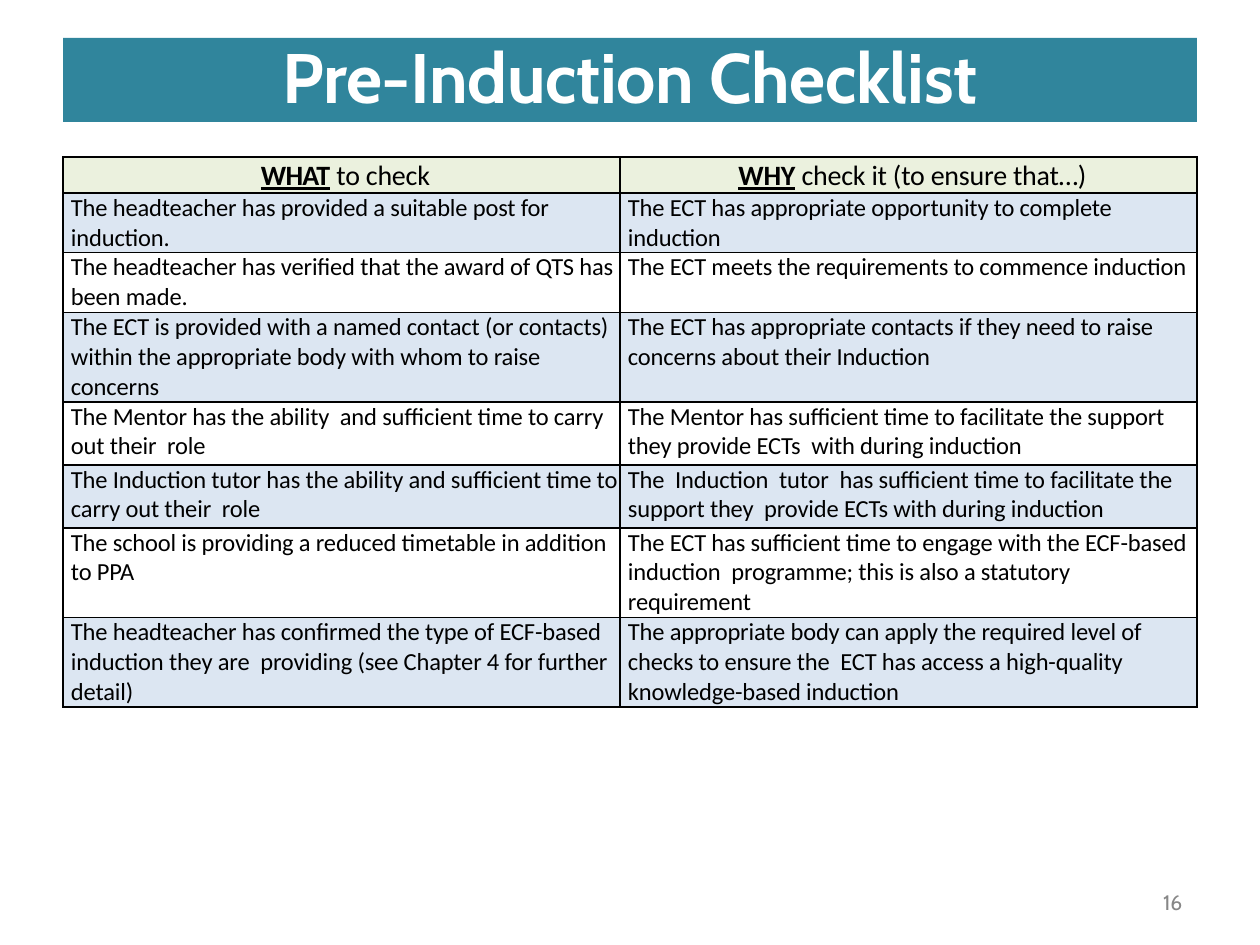
from dataclasses import dataclass

from lxml.etree import SubElement
from pptx import Presentation
from pptx.dml.color import RGBColor
from pptx.enum.text import MSO_ANCHOR, MSO_AUTO_SIZE, PP_ALIGN
from pptx.oxml.ns import qn
from pptx.util import Emu, Pt

PX_PER_INCH = 126
BLACK, WHITE, GREY = "000000", "FFFFFF", "878787"
TEAL, GREEN, BLUE = "30859C", "EBF1DE", "DCE6F2"


@dataclass
class Heading:
    key: str
    rest: str
    spacing: float


@dataclass
class Check:
    what: str
    why: str
    height: int


HEADINGS = [
    Heading("WHAT", " to check", -0.4),
    Heading("WHY", " check it (to ensure that…)", -0.1),
]
CHECKS = [
    Check("The headteacher has provided a suitable post for induction.",
          "The ECT has appropriate opportunity to complete induction", 59),
    Check("The headteacher has verified that the award of QTS has been made.",
          "The ECT meets the requirements to commence induction", 59),
    Check("The ECT is provided with a named contact (or contacts) within the "
          "appropriate body with whom to raise concerns",
          "The ECT has appropriate contacts if they need to raise concerns "
          "about their Induction", 88),
    Check("The Mentor has the ability  and sufficient time to carry out their  role",
          "The Mentor has sufficient time to facilitate the support they provide "
          "ECTs  with during induction", 63),
    Check("The Induction tutor has the ability and sufficient time to carry out "
          "their  role",
          "The  Induction  tutor  has sufficient time to facilitate the support "
          "they  provide ECTs with during induction", 63),
    Check("The school is providing a reduced timetable in addition to PPA",
          "The ECT has sufficient time to engage with the ECF-based induction  "
          "programme; this is also a statutory  requirement", 88),
    Check("The headteacher has confirmed the type of ECF-based induction they are  "
          "providing (see Chapter 4 for further  detail)",
          "The appropriate body can apply the required level of checks to ensure "
          "the  ECT has access a high-quality  knowledge-based induction", 88),
]
COLUMNS = [557, 577]
HEADER_HEIGHT = 36


def px(n: int) -> Emu:
    return Emu(round(n * 914400 / PX_PER_INCH))


def rgb(color: str) -> RGBColor:
    return RGBColor.from_string(color)


def style(r, font: str, size: int, color: str, bold: bool = False,
          spacing: float = 0) -> None:
    r.font.name, r.font.size, r.font.bold = font, Pt(size), bold
    r.font.color.rgb = rgb(color)
    r.font._element.set("spc", str(round(spacing * 100)))


def clear_insets(tf) -> None:
    tf.margin_left = tf.margin_right = tf.margin_top = tf.margin_bottom = 0
    tf.vertical_anchor = MSO_ANCHOR.TOP
    tf.word_wrap = True


def add_border(cell) -> None:
    tc_pr = cell._tc.get_or_add_tcPr()
    for i, side in enumerate(("a:lnL", "a:lnR", "a:lnT", "a:lnB")):
        ln = SubElement(tc_pr, qn(side), w=str(Pt(1)))
        fill = SubElement(ln, qn("a:solidFill"))
        SubElement(fill, qn("a:srgbClr"), val=BLACK)
        tc_pr.remove(ln)
        tc_pr.insert(i, ln)


def format_cell(cell, color: str | None) -> None:
    cell.margin_left = px(8)
    cell.margin_right = cell.margin_top = cell.margin_bottom = 0
    if color:
        cell.fill.solid()
        cell.fill.fore_color.rgb = rgb(color)
    else:
        cell.fill.background()
    add_border(cell)


def write_heading(cell, heading: Heading) -> None:
    p = cell.text_frame.paragraphs[0]
    p.alignment = PP_ALIGN.CENTER
    p.line_spacing = Pt(20.5)
    key, rest = p.add_run(), p.add_run()
    key.text, rest.text = heading.key, heading.rest
    style(key, "Calibri", 16, BLACK, True, heading.spacing)
    key.font.underline = True
    style(rest, "Calibri", 16, BLACK, spacing=-0.1)
    format_cell(cell, GREEN)


def write_check(cell, text: str, color: str | None) -> None:
    p = cell.text_frame.paragraphs[0]
    p.text = text
    style(p.runs[0], "Calibri", 14, BLACK, spacing=-0.1)
    format_cell(cell, color)


def add_title(s, text: str) -> None:
    sp = s.shapes.title
    sp.left, sp.top, sp.width, sp.height = px(63), px(38), px(1134), px(84)
    sp.fill.solid()
    sp.fill.fore_color.rgb = rgb(TEAL)
    tf = sp.text_frame
    clear_insets(tf)
    tf.auto_size = MSO_AUTO_SIZE.NONE
    tf.text = text
    p = tf.paragraphs[0]
    p.alignment = PP_ALIGN.CENTER
    p.line_spacing = Pt(45.7)
    style(p.runs[0], "Cabin", 40, WHITE, True, -0.2)


def add_checklist(s) -> None:
    frame = s.shapes.add_table(len(CHECKS) + 1, len(COLUMNS), px(63), px(157),
                               px(sum(COLUMNS)),
                               px(HEADER_HEIGHT + sum(c.height for c in CHECKS)))
    table = frame.table
    table.first_row = table.horz_banding = False
    for i, width in enumerate(COLUMNS):
        table.columns[i].width = px(width)
        write_heading(table.cell(0, i), HEADINGS[i])
    table.rows[0].height = px(HEADER_HEIGHT)
    for i, check in enumerate(CHECKS, 1):
        table.rows[i].height = px(check.height)
        color = BLUE if i % 2 else None
        write_check(table.cell(i, 0), check.what, color)
        write_check(table.cell(i, 1), check.why, color)


def add_page_number(s, number: int) -> None:
    tf = s.shapes.add_textbox(px(1158), px(893), px(32), px(24)).text_frame
    clear_insets(tf)
    tf.margin_left = px(5)
    tf.text = str(number)
    p = tf.paragraphs[0]
    p.line_spacing = Pt(12.4)
    style(p.runs[0], "Cabin", 12, GREY)


def main() -> None:
    prs = Presentation()
    prs.slide_width, prs.slide_height = px(1260), px(945)
    s = prs.slides.add_slide(prs.slide_layouts[5])
    add_title(s, "Pre-Induction Checklist")
    add_checklist(s)
    add_page_number(s, 16)
    prs.save("out.pptx")


if __name__ == "__main__":
    main()
